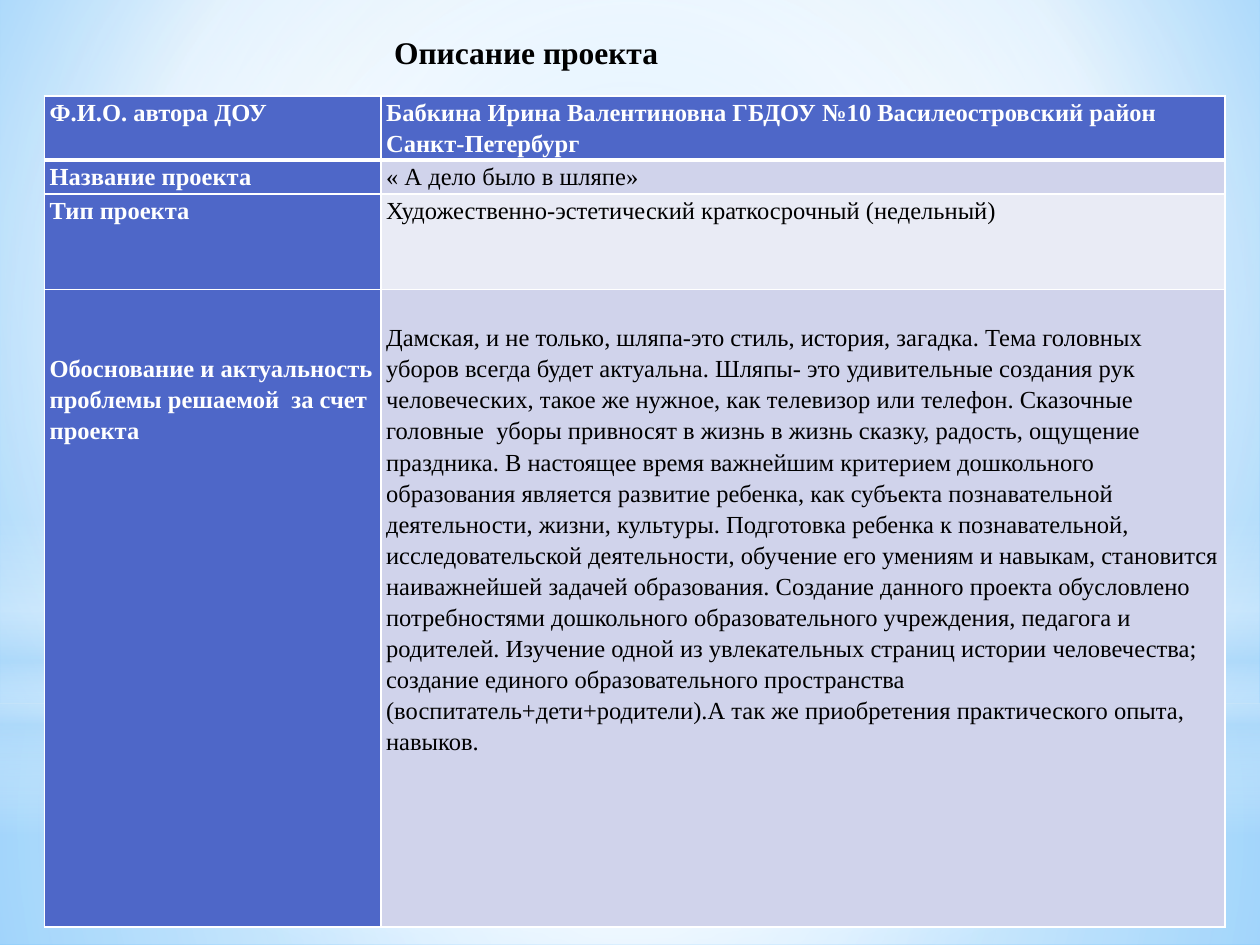
from pptx import Presentation
from pptx.dml.color import RGBColor
from pptx.enum import shapes, text
from pptx.oxml import ns, parse_xml
from pptx.util import Pt

WHITE = RGBColor(0xFF, 0xFF, 0xFF)
BLACK = RGBColor(0, 0, 0)
BLUE = RGBColor(0x4E, 0x67, 0xC8)
LILAC = RGBColor(0xD0, 0xD3, 0xEB)
PALE = RGBColor(0xE9, 0xEB, 0xF5)
SKY = RGBColor(0xB4, 0xDC, 0xFA)
LIGHT = RGBColor(0x9E, 0xD5, 0xFF)
DEEP = RGBColor(0x5B, 0xB9, 0xFF)

FONT = "Times New Roman"
LINE = 17.75  # pitch of one text line in the table
MID = (50, 50, 50, 50)

# Sentences of the project's rationale
REASON = (
    "Дамская, и не только, шляпа-это стиль, история, загадка.",
    "Тема головных уборов всегда будет актуальна.",
    "Шляпы- это удивительные создания рук человеческих, такое же нужное, "
    "как телевизор или телефон.",
    "Сказочные головные  уборы привносят в жизнь в жизнь сказку, радость, "
    "ощущение праздника.",
    "В настоящее время важнейшим критерием дошкольного образования является "
    "развитие ребенка, как субъекта познавательной деятельности, жизни, "
    "культуры.",
    "Подготовка ребенка к познавательной, исследовательской деятельности, "
    "обучение его умениям и навыкам, становится наиважнейшей задачей "
    "образования.",
    "Создание данного проекта обусловлено  потребностями дошкольного "
    "образовательного учреждения, педагога и родителей.",
    "Изучение одной из увлекательных страниц истории человечества; создание "
    "единого образовательного пространства (воспитатель+дети+родители).А так "
    "же приобретения практического опыта, навыков.",
)

COLS = (192.25, 482.4)
# Row height, left text, right text, right fill, lines left free above each text
ROWS = (
    (36.7, "Ф.И.О. автора ДОУ",
     "Бабкина Ирина Валентиновна ГБДОУ №10 Василеостровский район  Санкт-Петербург",
     BLUE, (0, 0)),
    (19.4, "Название проекта", "« А дело было в шляпе»", LILAC, (0, 0)),
    (54.7, "Тип проекта", "Художественно-эстетический краткосрочный (недельный)",
     PALE, (0, 0)),
    (364.3, "Обоснование и актуальность проблемы решаемой  за счет проекта",
     " ".join(REASON), LILAC, (2, 1)),
)

# Backdrop layers: shape, top, height, stops (position, colour, opacity), focus
LAYERS = (
    ("RECTANGLE", 401.8, 138.2,
     ((0, WHITE, 91), (37, WHITE, 76), (100, SKY, 79)), MID),
    ("RECTANGLE", 0, 401.8,
     ((0, WHITE, 89), (48, WHITE, 62), (100, SKY, 79)), MID),
    ("RECTANGLE", 296.6, 180,
     ((0, WHITE, 0), (29, WHITE, 30), (45, SKY, 40), (55, WHITE, 26),
      (65, SKY, 60), (100, WHITE, 0)), None),
    ("OVAL", 126, 401.8, ((0, WHITE, 100), (56, WHITE, 0)), MID),
)


def put(obj, vals):
    """Set attributes from a dict."""
    for key, val in vals.items():
        setattr(obj, key, val)


def shade(fill, node, stops, focus):
    """Turn a fill into a gradient, round when it has a focus."""
    fill.solid()
    marks = "".join(
        f'<a:gs pos="{pos * 1000}"><a:srgbClr val="{tint}">'
        f'<a:alpha val="{alpha * 1000}"/></a:srgbClr></a:gs>'
        for pos, tint, alpha in stops)
    if focus:
        sides = " ".join(f'{s}="{v * 1000}"' for s, v in zip("ltrb", focus))
        way = f'<a:path path="circle"><a:fillToRect {sides}/></a:path>'
    else:
        way = '<a:lin ang="5400000" scaled="0"/>'
    grad = parse_xml(f'<a:gradFill {ns.nsdecls("a")} rotWithShape="1">'
                     f'<a:gsLst>{marks}</a:gsLst>{way}</a:gradFill>')
    old = node.xpath(".//p:bgPr/a:solidFill | ./p:spPr/a:solidFill")[0]
    old.getparent().replace(old, grad)


def layer(slide, kind, top, high, stops, focus):
    shape = slide.shapes.add_shape(
        getattr(shapes.MSO_SHAPE, kind), 0, Pt(top), Pt(720), Pt(high))
    shape.shadow.inherit = False
    shape.line.fill.background()
    shade(shape.fill, shape._element, stops, focus)


def write(para, words, size, tint, bold):
    run = para.add_run()
    run.text = words
    put(run.font, {"name": FONT, "size": Pt(size), "bold": bold})
    run.font.color.rgb = tint


def edge(cell, widths):
    """Draw white cell borders, widths in points by side."""
    props = cell._tc.get_or_add_tcPr()
    for side, wide in widths.items():
        props.append(parse_xml(
            f'<a:ln{side} {ns.nsdecls("a")} w="{Pt(wide)}"><a:solidFill>'
            f'<a:srgbClr val="{WHITE}"/></a:solidFill></a:ln{side}>'))


def fill_cell(cell, words, back, bold, free, widths):
    put(cell, {"margin_left": Pt(3), "margin_right": Pt(3),
               "margin_top": Pt(free * LINE), "margin_bottom": 0,
               "vertical_anchor": text.MSO_ANCHOR.TOP})
    edge(cell, widths)
    cell.fill.solid()
    cell.fill.fore_color.rgb = back
    para = cell.text_frame.paragraphs[0]
    para.line_spacing = 1.15
    write(para, words, 14, WHITE if back == BLUE else BLACK, bold)


def add_grid(slide):
    high = sum(row[0] for row in ROWS)
    grid = slide.shapes.add_table(len(ROWS), len(COLS), Pt(25.4), Pt(54.8),
                                  Pt(sum(COLS)), Pt(high)).table
    for col, wide in zip(grid.columns, COLS):
        col.width = Pt(wide)
    for i, (tall, label, body, back, free) in enumerate(ROWS):
        grid.rows[i].height = Pt(tall)
        # A thick rule parts the heading row from the rest
        widths = {"L": 1, "R": 1, "T": 3 if i == 1 else 1,
                  "B": 3 if i == 0 else 1}
        fill_cell(grid.cell(i, 0), label, BLUE, True, free[0], widths)
        fill_cell(grid.cell(i, 1), body, back, i == 0, free[1], widths)


def add_title(slide):
    title = slide.shapes.title
    put(title, {"left": Pt(218), "top": Pt(15), "width": Pt(167),
                "height": Pt(29)})
    frame = title.text_frame
    put(frame, {"word_wrap": False, "vertical_anchor": text.MSO_ANCHOR.TOP,
                "auto_size": text.MSO_AUTO_SIZE.SHAPE_TO_FIT_TEXT})
    para = frame.paragraphs[0]
    para.alignment = text.PP_ALIGN.LEFT
    write(para, "Описание проекта", 18, BLACK, True)
    # Bring the title in front of the backdrop
    slide.shapes._spTree.append(title._element)


def main():
    deck = Presentation()
    put(deck, {"slide_width": Pt(720), "slide_height": Pt(540)})
    slide = deck.slides.add_slide(deck.slide_layouts[5])
    # Backdrop
    shade(slide.background.fill, slide._element,
          ((0, LIGHT, 100), (60, WHITE, 100), (100, DEEP, 100)),
          (20, 10, 20, 60))
    for item in LAYERS:
        layer(slide, *item)
    # Content
    add_grid(slide)
    add_title(slide)
    deck.save("out.pptx")


if __name__ == "__main__":
    main()
